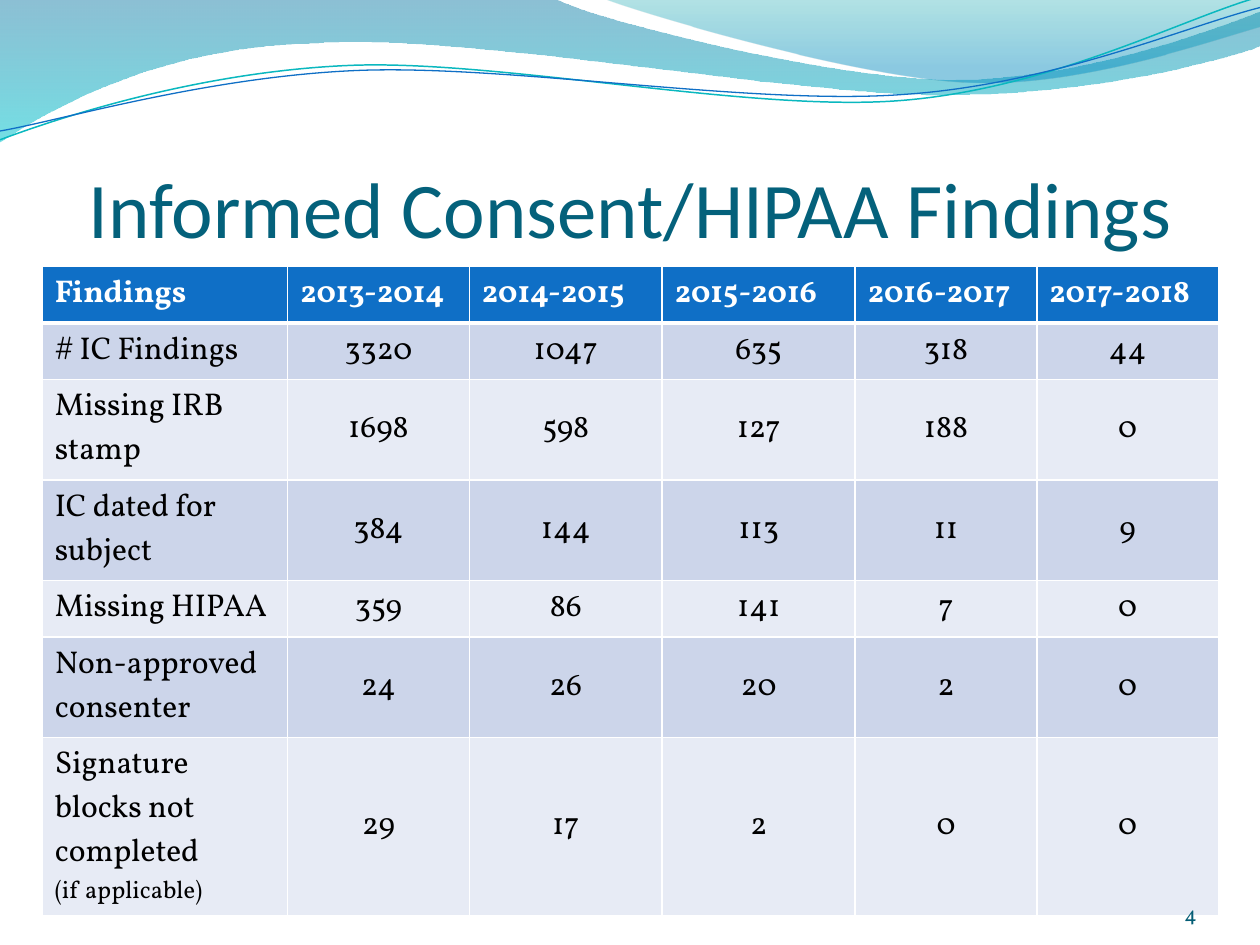
from lxml import etree
from pptx import Presentation
from pptx import util as u
from pptx.dml.color import RGBColor
from pptx.enum import text
from pptx.oxml.ns import qn

COLORS = {
    "title": "04617B", "header": "0F6FC6", "odd": "CCD5EA", "even": "E7EBF5",
    "white": "FFFFFF", "black": "000000", "number": "045D75",
    "deep": "0074A1", "cyan": "00C6CF", "teal": "00A1A9", "blue": "008BBF",
    "strand": "0AB8BF",
}
TITLE = "Informed Consent/HIPAA Findings"
PAGE = "4"
HEADER = ["Findings", "2013-2014", "2014-2015", "2015-2016", "2016-2017", "2017-2018"]
FINDINGS = [
    (["# IC Findings"], [3320, 1047, 635, 318, 44]),
    (["Missing IRB stamp"], [1698, 598, 127, 188, 0]),
    (["IC dated for subject"], [384, 144, 113, 11, 9]),
    (["Missing HIPAA"], [359, 86, 141, 7, 0]),
    (["Non-approved consenter"], [24, 26, 20, 2, 0]),
    (["Signature blocks not completed", "(if applicable)"], [29, 17, 2, 0, 0]),
]
COLUMN_WIDTHS = [4.95, 3.66, 3.89, 3.89, 3.66, 3.66]
ROW_HEIGHT = 1.03
WAVE_UNIT = u.Cm(0.0254)

# Each segment holds one end point, or two control points and an end point.
BANDS = [
    ([(0, 0), (440, -1), (476, 17, 664, 63, 758, 63),
      (853, 63, 958, 26, 1000, 9), (1001, 36),
      (983, 44, 870, 76, 746, 75), (622, 75, 382, 28, 257, 34),
      (129, 36, 46, 83, -1, 113)],
     [(0, "deep", 45), (1, "cyan", 55)]),
    ([(479, -1), (509, 11, 682, 62, 769, 65),
      (856, 69, 961, 32, 1000, 21), (1000, 0)],
     [(0, "teal", 30), (0.8, "blue", 45)]),
]
STRANDS = [
    ([(0, 111), (48, 93, 158, 57, 277, 52),
      (395, 47, 593, 89, 713, 80), (833, 71, 938, 15, 998, -2)],
     "strand", 0.85),
    ([(0, 104), (47, 96, 164, 61, 283, 56),
      (403, 51, 597, 84, 717, 75), (836, 67, 941, 21, 1000, 6)],
     "header", 0.75),
]


def rgb(name):
    return RGBColor.from_string(COLORS[name])


def add_wave(slide, segments, close):
    ends = [segment[-2:] for segment in segments]
    left, top = (min(values) for values in zip(*ends))
    builder = slide.shapes.build_freeform(*ends[0], scale=WAVE_UNIT)
    builder.add_line_segments(ends[1:], close=close)
    wave = builder.convert_to_shape()
    wave.shadow.inherit = False
    lines = list(wave._element.iter(qn("a:lnTo")))
    for line, segment in zip(lines, segments[1:]):
        if len(segment) == 6:
            curve = etree.Element(qn("a:cubicBezTo"))
            for x, y in zip(segment[::2], segment[1::2]):
                etree.SubElement(curve, qn("a:pt"), x=str(x - left), y=str(y - top))
            line.getparent().replace(line, curve)
    return wave


def add_band(slide, segments, stops):
    band = add_wave(slide, segments, True)
    band.line.fill.background()
    band.fill.gradient()
    band.fill.gradient_angle = 270
    for stop, (position, color, _) in zip(band.fill.gradient_stops, stops):
        stop.position = position
        stop.color.rgb = rgb(color)
    tints = band._element.spPr.find(qn("a:gradFill")).iter(qn("a:srgbClr"))
    for tint, (_, _, opacity) in zip(tints, stops):
        etree.SubElement(tint, qn("a:alpha"), val=str(opacity * 1000))


def add_strand(slide, segments, color, width):
    strand = add_wave(slide, segments, False)
    strand.fill.background()
    strand.line.color.rgb = rgb(color)
    strand.line.width = u.Pt(width)


def write(paragraph, words, size, font, color, align, bold=False):
    paragraph.alignment = align
    run = paragraph.add_run()
    run.text = words
    run.font.size = u.Pt(size)
    run.font.name = font
    run.font.bold = bold
    run.font.color.rgb = rgb(color)


def set_frame(frame, top=0):
    frame.margin_left = frame.margin_right = frame.margin_bottom = 0
    frame.margin_top = u.Cm(top)
    frame.vertical_anchor = text.MSO_ANCHOR.BOTTOM
    frame.word_wrap = True
    frame.auto_size = text.MSO_AUTO_SIZE.NONE


def set_borders(cell, top, bottom):
    properties = cell._tc.get_or_add_tcPr()
    widths = {"a:lnL": 1, "a:lnR": 1, "a:lnT": top, "a:lnB": bottom}
    for index, (side, width) in enumerate(widths.items()):
        border = etree.Element(qn(side), w=str(u.Pt(width)))
        fill = etree.SubElement(border, qn("a:solidFill"))
        etree.SubElement(fill, qn("a:srgbClr"), val=COLORS["white"])
        properties.insert(index, border)


def add_findings(slide):
    rows = [[[label] for label in HEADER]]
    rows += [[label] + [[str(count)] for count in counts] for label, counts in FINDINGS]
    table = slide.shapes.add_table(
        len(rows), len(HEADER), u.Cm(0.85), u.Cm(5.37),
        u.Cm(sum(COLUMN_WIDTHS)), u.Cm(ROW_HEIGHT * len(rows))).table
    for column, width in zip(table.columns, COLUMN_WIDTHS):
        column.width = u.Cm(width)
    for r, row in enumerate(rows):
        table.rows[r].height = u.Cm(ROW_HEIGHT)
        heading = r == 0
        shade = "header" if heading else "odd" if r % 2 else "even"
        for c, lines in enumerate(row):
            cell = table.cell(r, c)
            cell.fill.solid()
            cell.fill.fore_color.rgb = rgb(shade)
            set_borders(cell, 3 if r == 1 else 1, 3 if heading else 1)
            is_count = not heading and c > 0
            if is_count:
                cell.vertical_anchor = text.MSO_ANCHOR.MIDDLE
            align = text.PP_ALIGN.CENTER if is_count else text.PP_ALIGN.LEFT
            for i, line in enumerate(lines):
                frame = cell.text_frame
                paragraph = frame.add_paragraph() if i else frame.paragraphs[0]
                write(paragraph, line, 14 if i else 18, "Vollkorn",
                      "white" if heading else "black", align, heading)


def main():
    deck = Presentation()
    deck.slide_width, deck.slide_height = u.Cm(25.4), u.Cm(19.05)
    slide = deck.slides.add_slide(deck.slide_layouts[5])

    for band in BANDS:
        add_band(slide, *band)
    for strand in STRANDS:
        add_strand(slide, *strand)

    title = slide.shapes.title
    title.left, title.top = u.Cm(1.27), u.Cm(1.95)
    title.width, title.height = u.Cm(22.86), u.Cm(3.18)
    set_frame(title.text_frame, 0.13)
    write(title.text_frame.paragraphs[0], TITLE, 45, "Calibri",
          "title", text.PP_ALIGN.CENTER)
    slide.shapes._spTree.append(title._element)

    add_findings(slide)

    number = slide.shapes.add_textbox(u.Cm(22.02), u.Cm(17.65), u.Cm(2.11), u.Cm(1.02))
    set_frame(number.text_frame)
    write(number.text_frame.paragraphs[0], PAGE, 12, "Vollkorn",
          "number", text.PP_ALIGN.RIGHT)

    deck.save("out.pptx")


if __name__ == "__main__":
    main()
